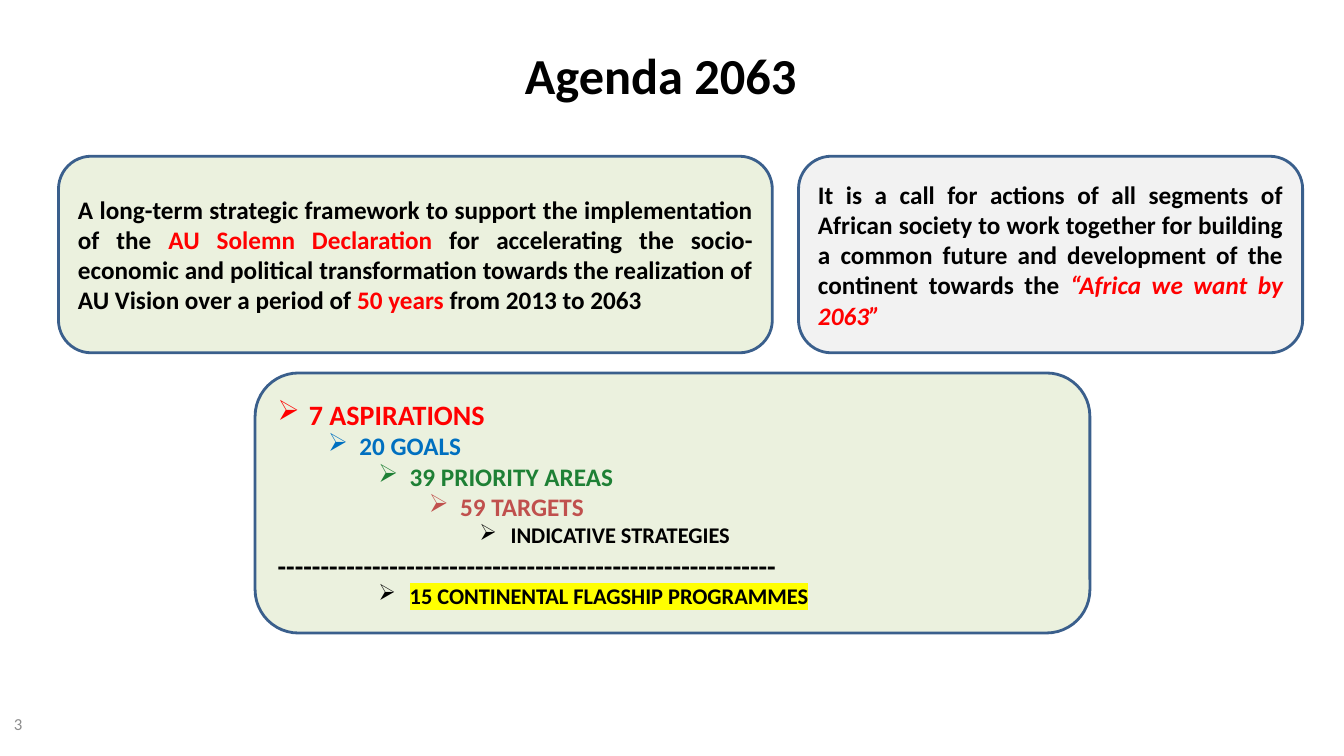
from dataclasses import dataclass

from lxml.etree import SubElement
from pptx import Presentation
from pptx.dml.color import RGBColor
from pptx.enum.shapes import MSO_SHAPE as Preset
from pptx.enum.text import MSO_ANCHOR as Anchor, PP_ALIGN as Align
from pptx.oxml.ns import qn
from pptx.slide import Slide
from pptx.text.text import TextFrame, _Paragraph as Paragraph, _Run as Run
from pptx.util import Inches, Pt


@dataclass(frozen=True)
class Theme:
    font: str = "Calibri"
    black: str = "000000"
    red: str = "FF0000"
    blue: str = "0070C0"
    green: str = "1E8035"
    brick: str = "C0504D"
    grey: str = "8C8C8C"
    highlight: str = "FFFF00"
    border: str = "3A5F8C"
    pale_green: str = "EBF1DE"
    pale_grey: str = "F2F2F2"
    title: int = 36
    large: int = 20
    body: int = 18
    small: int = 16
    footer: int = 12


THEME = Theme()


@dataclass(frozen=True)
class Box:
    left: float
    top: float
    width: float
    height: float

    def lengths(self) -> tuple[int, ...]:
        return tuple(map(Inches, (self.left, self.top, self.width, self.height)))


@dataclass(frozen=True)
class Phrase:
    text: str
    color: str = THEME.black
    italic: bool = False


@dataclass(frozen=True)
class Statement:
    box: Box
    fill: str
    phrases: tuple[Phrase, ...]


@dataclass(frozen=True)
class Tier:
    text: str
    size: int
    color: str = THEME.black
    level: int = 0
    bulleted: bool = True
    highlighted: bool = False


STATEMENTS = (
    Statement(Box(0.58, 1.55, 7.08, 1.95), THEME.pale_green, (
        Phrase("A long-term strategic framework to support the implementation of the "),
        Phrase("AU Solemn Declaration", THEME.red),
        Phrase(" for accelerating the socio-economic and political transformation "
               "towards the realization of AU Vision over a period of "),
        Phrase("50 years ", THEME.red),
        Phrase("from 2013 to 2063"),
    )),
    Statement(Box(7.92, 1.55, 5, 1.95), THEME.pale_grey, (
        Phrase("It is a call for actions of all segments of African society to work together "
               "for building a common future and development of the continent towards the "),
        Phrase("“Africa we want by 2063”", THEME.red, italic=True),
    )),
)

TIERS_BOX = Box(2.53, 3.7, 8.28, 2.58)
TIERS = (
    Tier("7 ASPIRATIONS", THEME.large, THEME.red),
    Tier("20 GOALS", THEME.body, THEME.blue, level=1),
    Tier("39 PRIORITY AREAS", THEME.body, THEME.green, level=2),
    Tier("59 TARGETS", THEME.body, THEME.brick, level=3),
    Tier("INDICATIVE STRATEGIES", THEME.small, level=4),
    Tier("-" * 58, THEME.large, bulleted=False),
    Tier("15 CONTINENTAL FLAGSHIP PROGRAMMES", THEME.small, level=2, highlighted=True),
)
HANGING = 0.31
LEVEL_STEP = 0.5


def style(paragraph: Paragraph, size: int, color: str | None = None, bold: bool = True) -> None:
    font = paragraph.font
    font.name, font.size, font.bold = THEME.font, Pt(size), bold
    if color:
        font.color.rgb = RGBColor.from_string(color)


def add_bullet(paragraph: Paragraph, level: int) -> None:
    paragraph.level = level
    properties = paragraph._p.get_or_add_pPr()
    properties.set("marL", str(Inches(HANGING + LEVEL_STEP * level)))
    properties.set("indent", str(Inches(-HANGING)))
    SubElement(properties, qn("a:buChar")).set("char", "➢")


def highlight(run: Run, color: str) -> None:
    mark = SubElement(run._r.get_or_add_rPr(), qn("a:highlight"))
    SubElement(mark, qn("a:srgbClr")).set("val", color)


def add_label(slide: Slide, box: Box, text: str, size: int, color: str, bold: bool) -> TextFrame:
    frame = slide.shapes.add_textbox(*box.lengths()).text_frame
    frame.word_wrap = True
    frame.vertical_anchor = Anchor.MIDDLE
    frame.text = text
    style(frame.paragraphs[0], size, color, bold)
    return frame


def add_panel(slide: Slide, box: Box, fill: str) -> TextFrame:
    panel = slide.shapes.add_shape(Preset.ROUNDED_RECTANGLE, *box.lengths())
    panel.shadow.inherit = False
    panel.fill.solid()
    panel.fill.fore_color.rgb = RGBColor.from_string(fill)
    panel.line.color.rgb = RGBColor.from_string(THEME.border)
    panel.line.width = Pt(2)
    frame = panel.text_frame
    frame.word_wrap = True
    frame.vertical_anchor = Anchor.MIDDLE
    return frame


def add_statement(slide: Slide, statement: Statement) -> None:
    paragraph = add_panel(slide, statement.box, statement.fill).paragraphs[0]
    paragraph.alignment = Align.JUSTIFY
    style(paragraph, THEME.body)
    for phrase in statement.phrases:
        run = paragraph.add_run()
        run.text = phrase.text
        run.font.color.rgb = RGBColor.from_string(phrase.color)
        if phrase.italic:
            run.font.italic = True


def add_tiers(slide: Slide) -> None:
    frame = add_panel(slide, TIERS_BOX, THEME.pale_green)
    for index, tier in enumerate(TIERS):
        paragraph = frame.add_paragraph() if index else frame.paragraphs[0]
        paragraph.alignment = Align.LEFT
        if tier.bulleted:
            add_bullet(paragraph, tier.level)
        style(paragraph, tier.size, tier.color)
        run = paragraph.add_run()
        run.text = tier.text
        if tier.highlighted:
            highlight(run, THEME.highlight)


def main() -> None:
    deck = Presentation()
    deck.slide_width, deck.slide_height = Inches(13.33), Inches(7.5)
    slide = deck.slides.add_slide(deck.slide_layouts[6])

    title = add_label(slide, Box(0.67, 0.3, 12, 0.87), "Agenda 2063",
                      THEME.title, THEME.black, bold=True)
    title.paragraphs[0].alignment = Align.CENTER
    title.margin_right = Inches(0.33)
    add_label(slide, Box(0.04, 6.98, 3.11, 0.4), "3", THEME.footer, THEME.grey, bold=False)

    for statement in STATEMENTS:
        add_statement(slide, statement)
    add_tiers(slide)
    deck.save("out.pptx")


if __name__ == "__main__":
    main()
